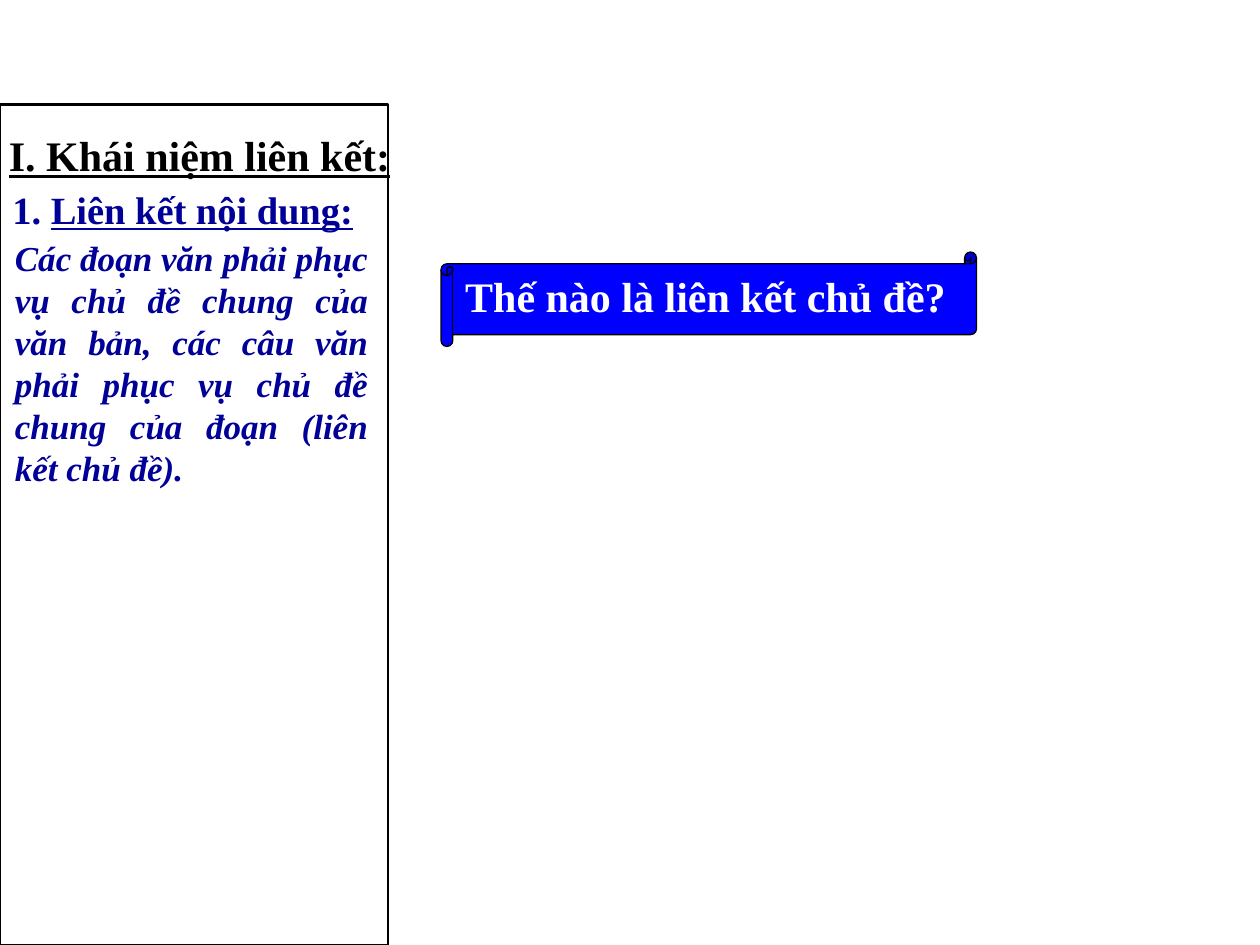
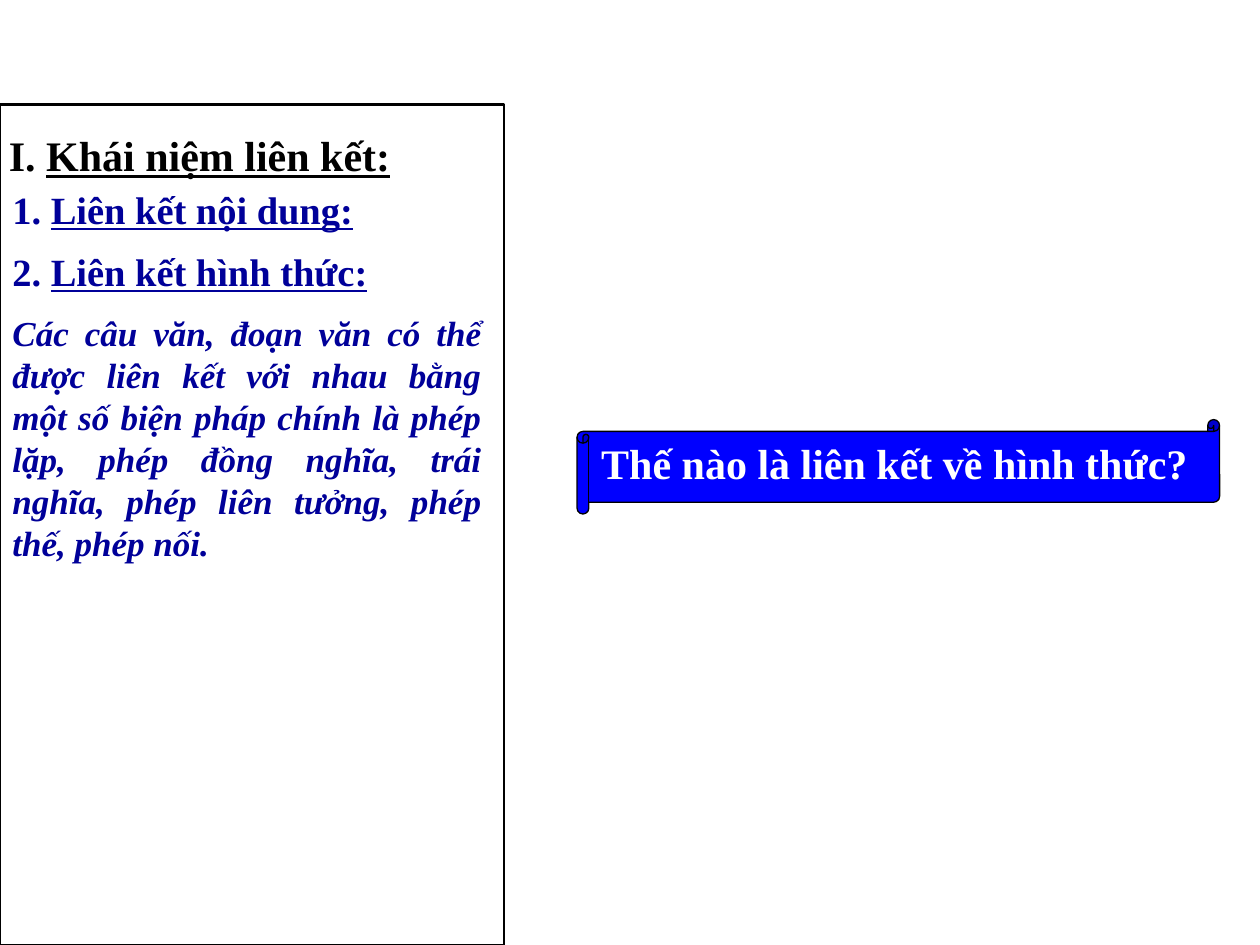
"""Build two lesson slides on cohesion: an outline panel and a question scroll."""
from dataclasses import dataclass

from pptx import Presentation
from pptx.dml.color import RGBColor
from pptx.enum.shapes import MSO_SHAPE
from pptx.enum.text import MSO_ANCHOR, MSO_AUTO_SIZE, PP_ALIGN
from pptx.shapes.autoshape import Shape
from pptx.slide import Slide
from pptx.util import Inches, Pt

RECTANGLE = MSO_SHAPE.RECTANGLE
SCROLL = MSO_SHAPE.HORIZONTAL_SCROLL
LEFT, JUSTIFY = PP_ALIGN.LEFT, PP_ALIGN.JUSTIFY
TOP = MSO_ANCHOR.TOP
NO_AUTOFIT = MSO_AUTO_SIZE.NONE

FONT = "Times New Roman"
COLORS = {"heading": "000000", "outline": "000099", "scroll": "0000FF",
          "question": "FFFFFF", "line": "000000"}
TITLE_ONLY_LAYOUT = 5
PANEL_TOP, PANEL_HEIGHT = 0.83, 6.67


@dataclass(frozen=True)
class Box:
    """A place on the slide, in inches."""
    left: float
    top: float
    width: float
    height: float


@dataclass(frozen=True)
class TextStyle:
    """The look of one kind of text."""
    size: int
    color: str
    align: PP_ALIGN = LEFT
    italic: bool = False


@dataclass(frozen=True)
class Subheading:
    """A numbered subheading and its place."""
    number: str
    text: str
    box: Box


@dataclass(frozen=True)
class Lesson:
    """Everything that differs between the slides."""
    number_underlined: bool
    panel_width: float
    subheadings: tuple[Subheading, ...]
    summary: str
    summary_box: Box
    question: str
    question_box: Box


HEADING = TextStyle(24, "heading")
SUBHEADING = TextStyle(22, "outline")
SUMMARY = TextStyle(20, "outline", JUSTIFY, True)
QUESTION = TextStyle(24, "question", JUSTIFY)

HEADING_BOX = Box(-0.03, 0.98, 3.25, 0.5)
CONTENT_COHESION = Subheading("1. ", "Liên kết nội dung:", Box(0, 1.43, 3.42, 0.47))
FORM_COHESION = Subheading("2. ", "Liên kết hình thức:", Box(0, 1.92, 3.75, 0.47))

LESSONS = (
    Lesson(
        True, 3.08, (CONTENT_COHESION,),
        "Các đoạn văn phải phục vụ chủ đề chung của văn bản, các câu văn phải "
        "phục vụ chủ đề chung của đoạn (liên kết chủ đề).",
        Box(0.02, 1.83, 3, 2.1),
        "Thế nào là liên kết chủ đề?", Box(3.5, 2, 4.25, 0.75)),
    Lesson(
        False, 4, (CONTENT_COHESION, FORM_COHESION),
        "Các câu văn, đoạn văn có thể được liên kết với nhau bằng một số biện "
        "pháp chính là phép lặp, phép đồng nghĩa, trái nghĩa, phép liên tưởng, "
        "phép thế, phép nối.",
        Box(0, 2.42, 3.92, 2.1),
        "Thế nào là liên kết về hình thức?", Box(4.58, 3.33, 5.1, 0.75)),
)


def color(name: str) -> RGBColor:
    """Look up a named colour."""
    return RGBColor.from_string(COLORS[name])


def lengths(box: Box) -> tuple[Inches, ...]:
    """Convert a box to left, top, width and height."""
    return tuple(Inches(value) for value in (box.left, box.top, box.width, box.height))


def write(shape: Shape, style: TextStyle, plain: str, underlined: str = "") -> None:
    """Fill a shape with one paragraph, its last part underlined."""
    frame = shape.text_frame
    frame.word_wrap = True
    frame.auto_size = NO_AUTOFIT
    frame.vertical_anchor = TOP
    paragraph = frame.paragraphs[0]
    paragraph.alignment = style.align
    font = paragraph.font
    font.name, font.size = FONT, Pt(style.size)
    font.bold, font.italic = True, style.italic
    font.color.rgb = color(style.color)
    if plain:
        paragraph.add_run().text = plain
    if underlined:
        run = paragraph.add_run()
        run.text = underlined
        run.font.underline = True


def add_text(slide: Slide, box: Box, style: TextStyle, plain: str,
             underlined: str = "") -> None:
    """Add a text box."""
    write(slide.shapes.add_textbox(*lengths(box)), style, plain, underlined)


def add_outlined(slide: Slide, kind: MSO_SHAPE, box: Box, line_width: float) -> Shape:
    """Add an unfilled shape with a line and no shadow."""
    shape = slide.shapes.add_shape(kind, *lengths(box))
    shape.shadow.inherit = False
    shape.fill.background()
    shape.line.color.rgb = color("line")
    shape.line.width = Pt(line_width)
    return shape


def add_heading(slide: Slide, number_underlined: bool) -> None:
    """Place the section heading in the title placeholder."""
    title = slide.shapes.title
    title.left, title.top, title.width, title.height = lengths(HEADING_BOX)
    number, text = "I. ", "Khái niệm liên kết:"
    if number_underlined:
        write(title, HEADING, "", number + text)
    else:
        write(title, HEADING, number, text)


def add_question(slide: Slide, box: Box, text: str) -> None:
    """Add the question on a scroll."""
    scroll = add_outlined(slide, SCROLL, box, 0.75)
    scroll.fill.solid()
    scroll.fill.fore_color.rgb = color("scroll")
    write(scroll, QUESTION, text)


def add_lesson(presentation: Presentation, lesson: Lesson) -> None:
    """Add one lesson slide."""
    slide = presentation.slides.add_slide(presentation.slide_layouts[TITLE_ONLY_LAYOUT])
    add_heading(slide, lesson.number_underlined)
    panel = Box(0, PANEL_TOP, lesson.panel_width, PANEL_HEIGHT)
    add_outlined(slide, RECTANGLE, panel, 1.5)
    for subheading in lesson.subheadings:
        add_text(slide, subheading.box, SUBHEADING, subheading.number, subheading.text)
    add_question(slide, lesson.question_box, lesson.question)
    add_text(slide, lesson.summary_box, SUMMARY, lesson.summary)


def main() -> None:
    """Build and save the presentation."""
    presentation = Presentation()
    presentation.slide_width, presentation.slide_height = Inches(10), Inches(7.5)
    for lesson in LESSONS:
        add_lesson(presentation, lesson)
    presentation.save("out.pptx")


if __name__ == "__main__":
    main()
